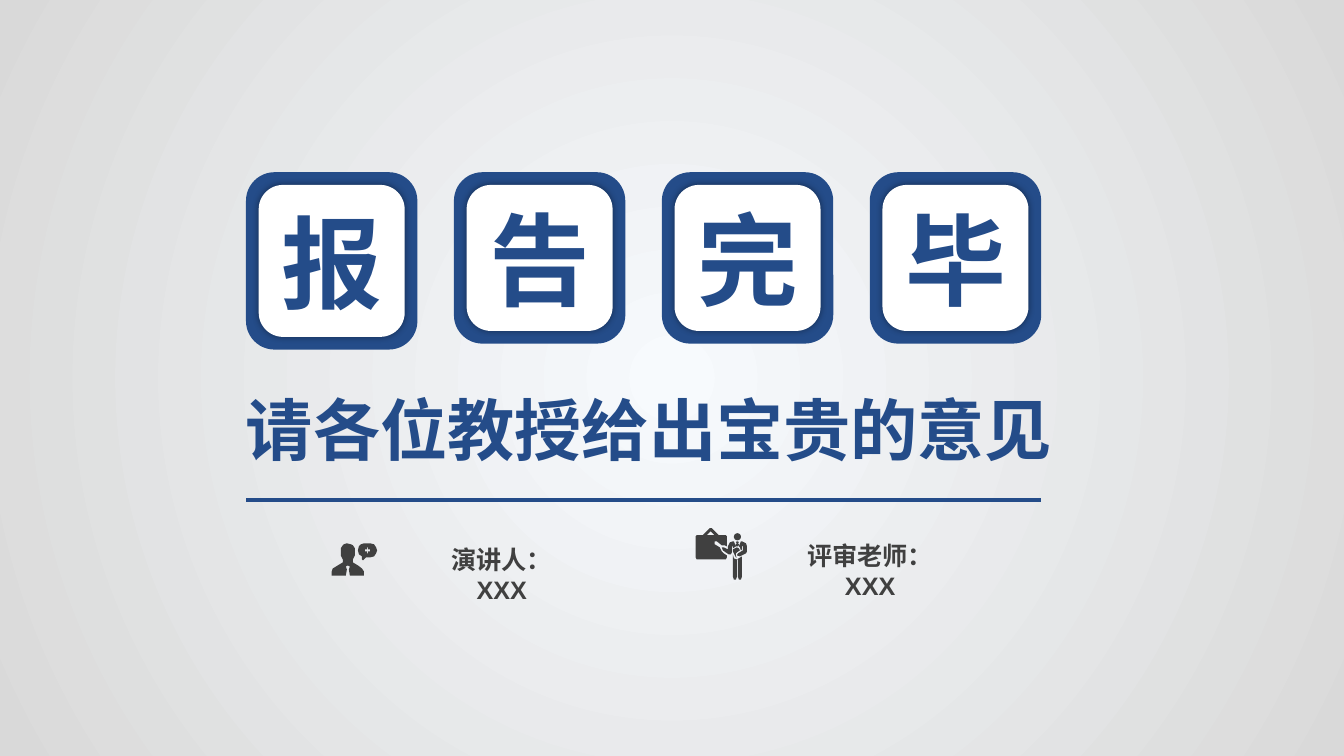
"""Build the closing slide of a report, with four title tiles and two labelled icons."""
import math
from pptx import Presentation, util as u
from pptx.dml.color import RGBColor
from pptx.enum import shapes, text
from pptx.oxml import parse_xml
from pptx.oxml.ns import qn
from lxml import etree

NAVY = RGBColor(0x24, 0x4C, 0x89)
WHITE = RGBColor(0xFF, 0xFF, 0xFF)
GREY = RGBColor(0x40, 0x40, 0x40)
NS = ('xmlns:a="http://schemas.openxmlformats.org/drawingml/2006/main" '
      'xmlns:p="http://schemas.openxmlformats.org/presentationml/2006/main"')


def oval(mid_x, mid_y, rad_x, rad_y):
    turns = [math.tau * i / 32 for i in range(32)]
    return [(mid_x + rad_x * math.cos(t), mid_y + rad_y * math.sin(t)) for t in turns]


TITLE = "请各位教授给出宝贵的意见"
TILES = [("报", 4.47), ("告", 4.32), ("完", 4.32), ("毕", 4.32)]
LABELS = [("演讲人：XXX", 10.46, 13.59, 4.37), ("评审老师：XXX", 19.43, 13.49, 5.0)]
SPEAKER = [
    [(35, 4), (35, 6), (33, 6), (33, 8), (35, 8), (35, 10), (36, 10), (36, 8),
     (38, 8), (38, 6), (36, 6), (36, 4)],
    [(32, 0), (38, 0), (42, 1), (44, 4), (45, 7), (44, 10), (42, 13), (38, 14),
     (34, 14), (31, 17), (30, 16), (30, 13), (27, 11), (26, 7), (27, 3), (29, 1)],
    [(15, 0), (19, 1), (21, 2), (23, 5), (23, 9), (23, 12), (22, 14), (21, 16),
     (21, 19), (26, 22), (30, 25), (32, 28), (32, 32), (18, 32), (17, 26), (18, 23),
     (16, 22), (14, 23), (15, 26), (14, 32), (0, 32), (0, 28), (1, 25), (6, 22),
     (11, 19), (11, 16), (10, 14), (9, 12), (9, 9), (9, 5), (11, 2), (12, 1)],
]
TEACHER = [
    [(46, 28), (41, 31), (42, 31), (42, 48), (43, 51), (45, 51), (46, 48)],
    [(37, 26), (37, 48), (38, 51), (40, 51), (41, 48), (41, 31), (38, 30)],
    [(41, 19), (37, 21), (37, 23), (40, 29), (41, 29), (40, 28), (40, 25), (41, 24),
     (44, 22), (43, 20)],
    [(42, 13), (41, 13), (40, 14), (41, 15), (40, 16), (40, 18), (42, 18), (43, 17),
     (43, 16), (42, 15), (43, 14)],
    [(38, 13), (37, 13), (34, 14), (32, 18), (32, 21), (28, 19), (26, 19), (27, 22),
     (33, 26), (35, 26), (36, 24), (36, 18), (37, 18), (37, 20), (40, 18)],
    [(46, 13), (45, 13), (43, 18), (44, 19), (45, 22), (46, 21), (46, 18), (47, 17),
     (47, 22), (42, 25), (41, 27), (44, 28), (50, 25), (51, 23), (51, 18), (50, 15)],
    oval(41.5, 8.5, 3.5, 3.5),
    [(15, 3), (19, 7), (11, 7)],
    [(15, 0), (14, 0), (7, 7), (1, 7), (0, 8), (0, 29), (1, 31), (30, 31), (31, 29),
     (31, 27), (28, 25), (26, 23), (24, 19), (19, 16), (19, 13), (21, 13), (26, 17),
     (29, 17), (31, 18), (31, 8), (30, 7), (23, 7), (16, 0)],
]
ICONS = [(SPEAKER, 8.36, 13.69), (TEACHER, 17.53, 13.31)]
LEFT, TOP, SIDE, PITCH, RIM = 6.2, 4.34, 4.32, 5.24, 0.32
RULE = 12.6


def paint(shape, tint):
    shape.shadow.inherit = False
    shape.fill.solid()
    shape.fill.fore_color.rgb = tint
    shape.line.fill.background()


def write(shape, words, size, tint, anchor):
    frame = shape.text_frame
    frame.text = words
    frame.word_wrap = True
    frame.vertical_anchor = anchor
    para = frame.paragraphs[0]
    para.alignment = text.PP_ALIGN.CENTER
    font = para.runs[0].font
    font.name, font.size, font.bold = "Arial", u.Pt(size), True
    font.color.rgb = tint
    return frame


def shade(slide):
    slide.element.cSld.insert(0, parse_xml(
        f'<p:bg {NS}><p:bgPr><a:gradFill rotWithShape="1"><a:gsLst>'
        '<a:gs pos="0"><a:srgbClr val="F7FAFD"/></a:gs>'
        '<a:gs pos="100000"><a:srgbClr val="D9D9D9"/></a:gs></a:gsLst>'
        '<a:path path="circle"><a:fillToRect l="50000" t="50000" r="50000" b="50000"/>'
        '</a:path></a:gradFill><a:effectLst/></p:bgPr></p:bg>'))


def glow(shape):
    shape.element.spPr.find(qn("a:effectLst")).append(parse_xml(
        f'<a:outerShdw {NS} blurRad="63500" dist="0" algn="ctr" rotWithShape="0">'
        '<a:srgbClr val="000000"><a:alpha val="40000"/></a:srgbClr></a:outerShdw>'))


def box(slide, left, top, wide, high, tint):
    shape = slide.shapes.add_shape(
        shapes.MSO_SHAPE.ROUNDED_RECTANGLE, *map(u.Cm, (left, top, wide, high)))
    paint(shape, tint)
    return shape


def draw(slide, parts, left, top):
    loops = [[(x * 10, y * 10) for x, y in part] for part in parts]
    pen = slide.shapes.build_freeform(*loops[0][0], scale=u.Cm(0.0254) / 10)
    for i, loop in enumerate(loops):
        if i:
            pen.move_to(*loop[0])
        pen.add_line_segments(loop[1:], close=True)
    paint(pen.convert_to_shape(u.Cm(left), u.Cm(top)), GREY)


def main():
    deck = Presentation()
    deck.slide_width, deck.slide_height = u.Cm(33.87), u.Cm(19.05)
    slide = deck.slides.add_slide(deck.slide_layouts[6])
    shade(slide)

    title = slide.shapes.add_textbox(*map(u.Cm, (4.93, 9.8, 22.86, 2.18)))
    frame = write(title, TITLE, 48, NAVY, text.MSO_ANCHOR.BOTTOM)
    frame.paragraphs[0].line_spacing = 0.9

    for i, (word, high) in enumerate(TILES):
        left = LEFT + i * PITCH
        box(slide, left, TOP, SIDE, high, NAVY)
        face = box(slide, left + RIM, TOP + RIM, SIDE - 2 * RIM, high - 2 * RIM, WHITE)
        glow(face)
        write(face, word, 72, NAVY, text.MSO_ANCHOR.MIDDLE)

    right = LEFT + 3 * PITCH + SIDE
    rule = slide.shapes.add_connector(
        shapes.MSO_CONNECTOR.STRAIGHT, *map(u.Cm, (LEFT, RULE, right, RULE)))
    rule.line.color.rgb = NAVY
    rule.line.width = u.Pt(3)
    etree.SubElement(rule.element.spPr, qn("a:effectLst"))

    for words, left, top, wide in LABELS:
        label = slide.shapes.add_textbox(*map(u.Cm, (left, top, wide, 1.02)))
        frame = write(label, words, 18, GREY, text.MSO_ANCHOR.TOP)
        frame.margin_left = frame.margin_right = u.Cm(0.5)

    for icon in ICONS:
        draw(slide, *icon)
    deck.save("out.pptx")


if __name__ == "__main__":
    main()
